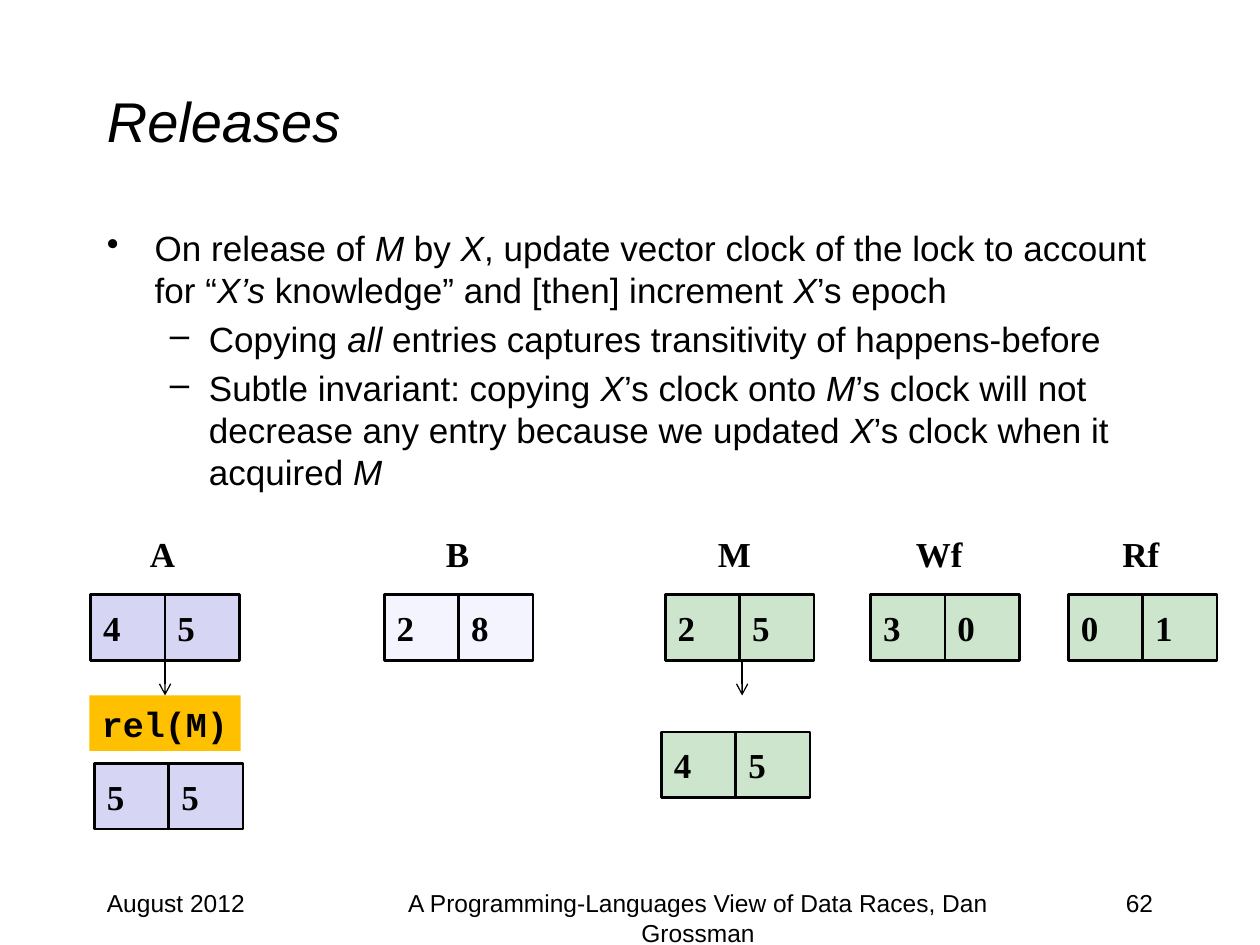
from lxml import etree
from pptx import Presentation
from pptx.dml.color import RGBColor
from pptx.enum.shapes import MSO_CONNECTOR, MSO_SHAPE
from pptx.enum.text import MSO_ANCHOR, PP_ALIGN
from pptx.oxml.ns import qn
from pptx.util import Pt

PX = 9144  # 100 px to the inch
RECT = MSO_SHAPE.RECTANGLE
LINE = MSO_CONNECTOR.STRAIGHT
TOP, MID = MSO_ANCHOR.TOP, MSO_ANCHOR.MIDDLE
LEFT, RIGHT, CENTER = PP_ALIGN.LEFT, PP_ALIGN.RIGHT, PP_ALIGN.CENTER
SANS, SERIF, MONO = "Arial", "Times New Roman", "Courier New"
COLORS = {
    "ink": "000000",
    "thread": "3333CC",
    "other": "CCCCFF",
    "lock": "008000",
    "event": "FFC000",
}
CELL_W, CELL_H = 59, 52


def color(name):
    return RGBColor.from_string(COLORS[name])


def write(shape, lines, font, size, bold=None, align=LEFT, anchor=MID, wrap=True):
    """Fill a shape with lines of text; parts between asterisks are italic."""
    frame = shape.text_frame
    frame.word_wrap = wrap
    frame.vertical_anchor = anchor
    for i, line in enumerate(lines):
        para = frame.add_paragraph() if i else frame.paragraphs[0]
        para.alignment = align
        para.font.name = font
        para.font.size = Pt(size)
        para.font.bold = bold
        para.font.color.rgb = color("ink")
        for j, part in enumerate(line.split("*")):
            if part:
                run = para.add_run()
                run.text = part
                if j % 2:
                    run.font.italic = True
    return frame


prs = Presentation()
prs.slide_width, prs.slide_height = 1000 * PX, 750 * PX
slide = prs.slides.add_slide(prs.slide_layouts[6])
shapes = slide.shapes

# Title and footer
for text, x, y, w, h, size, align, anchor in [
    ("*Releases*", 75, 33, 850, 125, 32, LEFT, MID),
    ("August 2012", 75, 700, 208, 50, 14, LEFT, TOP),
    ("62", 717, 700, 208, 50, 14, RIGHT, TOP),
    ("A Programming-Languages View of Data Races, Dan Grossman",
     275, 700, 558, 50, 14, CENTER, TOP),
]:
    box = shapes.add_textbox(x * PX, y * PX, w * PX, h * PX)
    write(box, [text], SANS, size, align=align, anchor=anchor)

# Bullets
points = [
    (0, "On release of *M *by *X*, update vector clock of the lock to account "
        "for “*X’s *knowledge” and [then] increment *X*’s epoch"),
    (1, "Copying *all* entries captures transitivity of happens-before"),
    (1, "Subtle invariant: copying *X*’s clock onto *M*’s clock will not "
        "decrease any entry because we updated *X*’s clock when it acquired *M*"),
]
body = shapes.add_textbox(75 * PX, 175 * PX, 850 * PX, 225 * PX)
frame = write(body, [text for _, text in points], SANS, 20, anchor=TOP)
for para, (level, _) in zip(frame.paragraphs, points):
    margin, hang, mark = [(38, 38, "•"), (81, 31, "–")][level]
    para.level = level
    para.space_before = Pt(4)
    props = para._p.get_or_add_pPr()
    props.set("marL", str(margin * PX))
    props.set("indent", str(-hang * PX))
    bullet = etree.Element(qn("a:buChar"), char=mark)
    props.find(qn("a:defRPr")).addprevious(bullet)

# Column heads
for text, x, w in [("A", 109, 41), ("B", 344, 39), ("M", 560, 47),
                   ("Wf", 717, 58), ("Rf", 881, 50)]:
    head = shapes.add_textbox(x * PX, 417 * PX, w * PX, 44 * PX)
    write(head, [text], SERIF, 20, bold=True, wrap=False)

# Vector clocks, two cells each
for x, y, fill, values in [
    (72, 472, "thread", "45"),
    (305, 472, "other", "28"),
    (528, 472, "lock", "25"),
    (691, 472, "lock", "30"),
    (848, 472, "lock", "01"),
    (75, 606, "thread", "55"),
    (525, 581, "lock", "45"),
]:
    clock = shapes.add_group_shape()
    for i, value in enumerate(values):
        cell = clock.shapes.add_shape(
            RECT, (x + i * CELL_W) * PX, y * PX, CELL_W * PX, CELL_H * PX)
        cell.shadow.inherit = False
        cell.fill.solid()
        cell.fill.fore_color.rgb = color(fill)
        tint = cell._element.spPr.find(qn("a:solidFill"))[0]
        etree.SubElement(tint, qn("a:alpha"), val="20000")
        cell.line.color.rgb = color("ink")
        cell.line.width = Pt(1.5)
        write(cell, [value], SERIF, 20, bold=True, wrap=False)

# Release event
event = shapes.add_shape(RECT, 71 * PX, 552 * PX, 120 * PX, 44 * PX)
event.shadow.inherit = False
event.fill.solid()
event.fill.fore_color.rgb = color("event")
event.line.fill.background()
write(event, ["rel(M)"], MONO, 20, bold=True, wrap=False)

# Arrows from the old clocks
for x, target in [(131, event), (589, None)]:
    arrow = shapes.add_connector(LINE, x * PX, 524 * PX, x * PX, 552 * PX)
    if target is not None:
        arrow.end_connect(target, 0)
    arrow.line.color.rgb = color("ink")
    arrow.line.width = Pt(0.75)
    etree.SubElement(arrow.line._get_or_add_ln(), qn("a:tailEnd"), type="arrow")
    etree.SubElement(arrow._element.spPr, qn("a:effectLst"))

prs.save("out.pptx")
